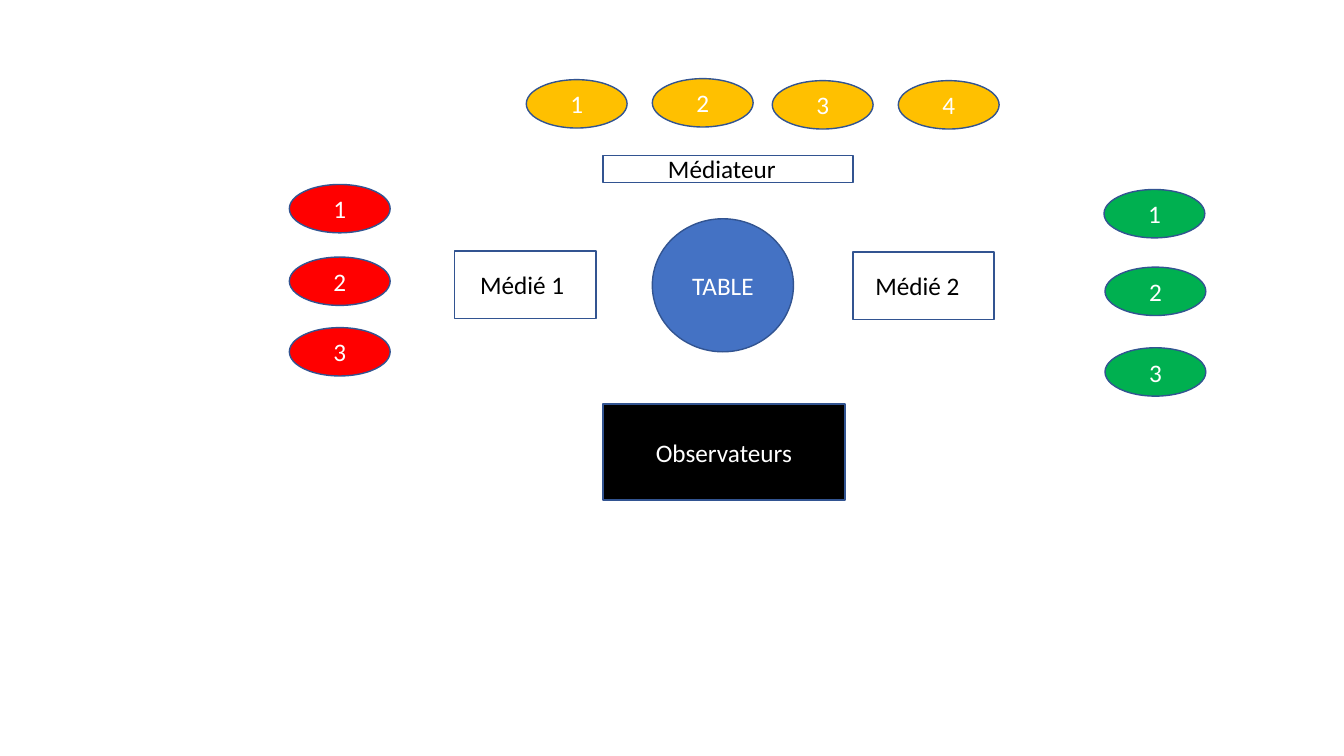
"""Build the seating plan of a mediation session around a table."""
from dataclasses import dataclass

from pptx import Presentation
from pptx.dml.color import RGBColor
from pptx.enum.shapes import MSO_SHAPE as Shape
from pptx.enum.text import MSO_ANCHOR as Anchor, PP_ALIGN as Align
from pptx.slide import Slide
from pptx.util import Emu, Pt

EMU_PER_PX = 9144
SLIDE_SIZE = (1333, 750)
SEAT_SIZE = (100, 48)
SIDE_INSET = 10
FONT = "Calibri"
COLORS = {
    "white": "FFFFFF",
    "black": "000000",
    "outline": "325491",
    "table": "4472C4",
    "amber": "FFC000",
    "red": "FF0000",
    "green": "00B050",
}


@dataclass(frozen=True)
class Place:
    """A labelled place in the room, with lengths in px."""
    label: str
    left: int
    top: int
    width: int
    height: int
    fill: str
    text: str = "white"
    kind: Shape = Shape.OVAL
    extra_right_inset: int = 0


@dataclass(frozen=True)
class SeatGroup:
    """Numbered seats of one colour, given by their top-left corners."""
    fill: str
    corners: tuple[tuple[int, int], ...]


SEAT_GROUPS = (
    SeatGroup("amber", ((522, 79), (647, 78), (766, 80), (891, 80))),
    SeatGroup("red", ((287, 183), (287, 255), (287, 325))),
    SeatGroup("green", ((1095, 188), (1096, 265), (1096, 345))),
)
PLACES = (
    Place("Médiateur", 598, 154, 248, 27, "white", "black", Shape.ROUNDED_RECTANGLE, 12),
    Place("TABLE", 647, 217, 140, 132, "table"),
    Place("Médié 1", 451, 249, 140, 67, "white", "black", Shape.ROUNDED_RECTANGLE, 6),
    Place("Médié 2", 846, 250, 140, 67, "white", "black", Shape.ROUNDED_RECTANGLE, 12),
    Place("Observateurs", 598, 401, 240, 95, "black", kind=Shape.RECTANGLE),
)


def px(length: int) -> Emu:
    """Convert px to EMU."""
    return Emu(length * EMU_PER_PX)


def color(name: str) -> RGBColor:
    """Look up a named colour."""
    return RGBColor.from_string(COLORS[name])


def draw_place(slide: Slide, place: Place) -> None:
    """Draw one place with its centred label."""
    shape = slide.shapes.add_shape(
        place.kind, px(place.left), px(place.top), px(place.width), px(place.height)
    )
    if place.kind == Shape.ROUNDED_RECTANGLE:
        shape.adjustments[0] = 0
    shape.shadow.inherit = False
    shape.fill.solid()
    shape.fill.fore_color.rgb = color(place.fill)
    shape.line.color.rgb = color("outline")
    shape.line.width = Pt(1)

    text_frame = shape.text_frame
    text_frame.text = place.label
    text_frame.word_wrap = True
    text_frame.vertical_anchor = Anchor.MIDDLE
    text_frame.margin_left = px(SIDE_INSET)
    text_frame.margin_right = px(SIDE_INSET + place.extra_right_inset)
    paragraph = text_frame.paragraphs[0]
    paragraph.alignment = Align.CENTER
    font = paragraph.runs[0].font
    font.name = FONT
    font.size = Pt(18)
    font.color.rgb = color(place.text)


def draw_seats(slide: Slide, group: SeatGroup) -> None:
    """Draw the seats of a group, numbered from one."""
    for number, corner in enumerate(group.corners, start=1):
        draw_place(slide, Place(str(number), *corner, *SEAT_SIZE, group.fill))


def main() -> None:
    """Create the presentation and save it."""
    presentation = Presentation()
    presentation.slide_width, presentation.slide_height = map(px, SLIDE_SIZE)
    slide = presentation.slides.add_slide(presentation.slide_layouts[6])
    for group in SEAT_GROUPS:
        draw_seats(slide, group)
    for place in PLACES:
        draw_place(slide, place)
    presentation.save("out.pptx")


if __name__ == "__main__":
    main()
